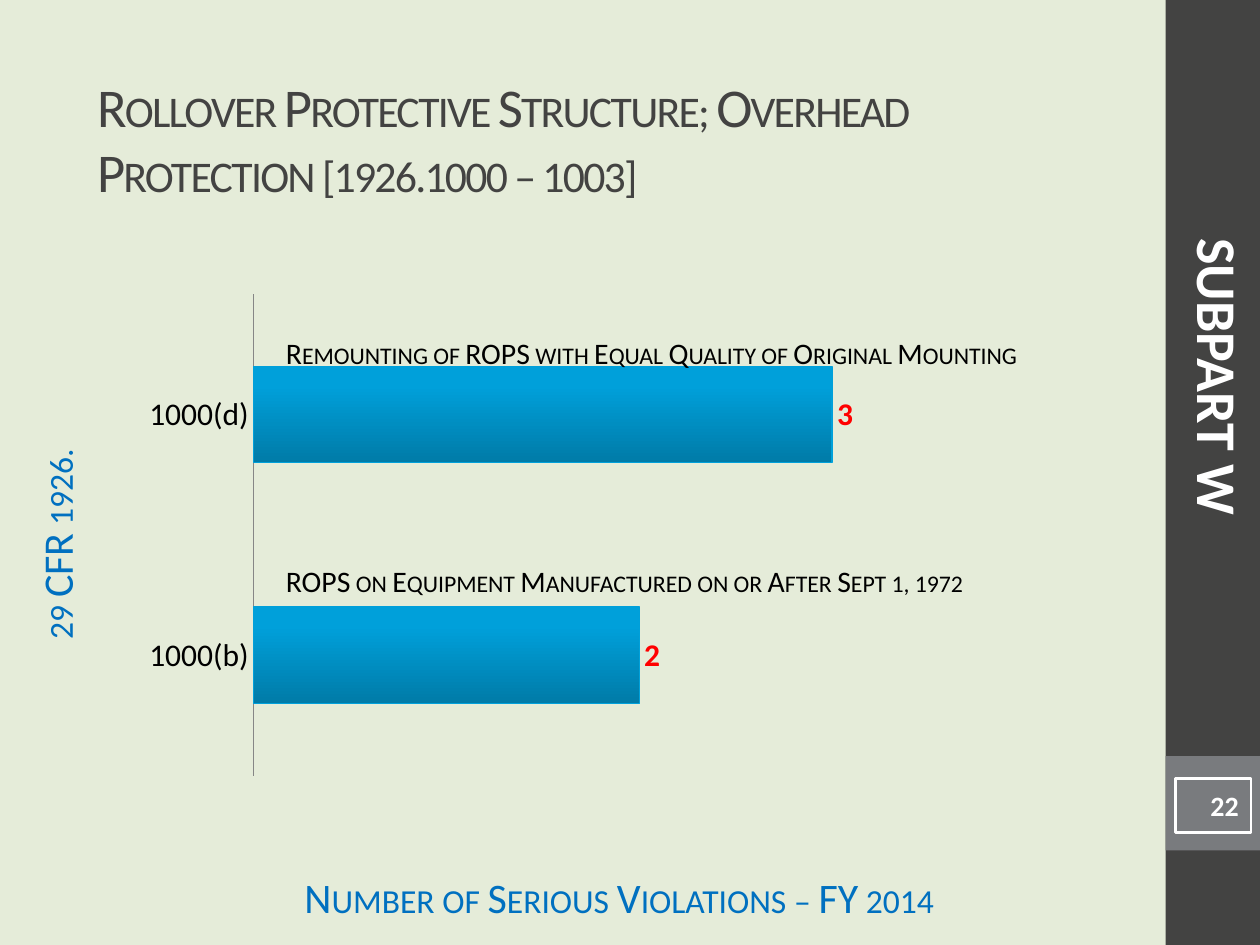
from dataclasses import dataclass

from lxml import etree
from pptx import Presentation
from pptx.chart.data import CategoryChartData
from pptx.dml.color import RGBColor
from pptx.enum.chart import XL_CHART_TYPE, XL_LABEL_POSITION, XL_TICK_MARK
from pptx.enum.shapes import MSO_SHAPE
from pptx.enum.text import MSO_ANCHOR, MSO_AUTO_SIZE, PP_ALIGN
from pptx.oxml.ns import qn
from pptx.util import Inches, Pt

BAR = XL_CHART_TYPE.BAR_CLUSTERED
OUTSIDE = XL_LABEL_POSITION.OUTSIDE_END
NO_TICK = XL_TICK_MARK.NONE
RECT = MSO_SHAPE.RECTANGLE
LEFT, CENTER, RIGHT = PP_ALIGN.LEFT, PP_ALIGN.CENTER, PP_ALIGN.RIGHT
TOP, MIDDLE = MSO_ANCHOR.TOP, MSO_ANCHOR.MIDDLE


@dataclass(frozen=True)
class Theme:
    font: str = "Calibri"
    background: str = "E5ECD9"
    dark: str = "434342"
    gray: str = "797B7E"
    axis: str = "868686"
    blue: str = "0070C0"
    bar_dark: str = "007BA8"
    bar_light: str = "00A0DA"
    value: str = "FF0000"
    black: str = "000000"
    white: str = "FFFFFF"
    title_size: float = 31.2
    subpart_size: float = 32
    axis_title_size: float = 24
    label_size: float = 18
    note_size: float = 17
    number_size: float = 16


THEME = Theme()
WIDTH, HEIGHT = 10, 7.5
SIDEBAR = 0.75  # width of the dark strip and height of the number block

TITLE = "Rollover Protective Structure; Overhead Protection [1926.1000 – 1003]"
SUBPART = "SUBPART W"
PAGE = "22"
VALUE_TITLE = "Number of Serious Violations – FY 2014"
CATEGORY_TITLE = "29 CFR 1926."
VIOLATIONS = {"1000(b)": 2, "1000(d)": 3}
NOTES = [
    ("Remounting of ROPS with Equal Quality of Original Mounting", 2.61, 6.15),
    ("ROPS on Equipment Manufactured on or After Sept 1, 1972", 4.42, 5.91),
]
PLOT_AREA = {"x": 0.156, "y": 0.021, "w": 0.824, "h": 0.956}  # shares of the chart


def rgb(code):
    return RGBColor.from_string(code)


def write(shape, text, size, color, align=LEFT, anchor=TOP, bold=False, small_caps=False):
    frame = shape.text_frame
    frame.text = text
    frame.word_wrap = True
    frame.auto_size = MSO_AUTO_SIZE.NONE
    frame.vertical_anchor = anchor
    paragraph = frame.paragraphs[0]
    paragraph.alignment = align
    run = paragraph.runs[0]
    font = run.font
    font.name, font.size, font.bold = THEME.font, Pt(size), bold
    font.color.rgb = rgb(color)
    if small_caps:
        run._r.get_or_add_rPr().set("cap", "small")
    return run


def add_text(slide, box, *args, rotation=0, **style):
    textbox = slide.shapes.add_textbox(*map(Inches, box))
    textbox.rotation = rotation
    write(textbox, *args, **style)
    return textbox.text_frame


def add_rectangle(slide, box, fill=None, line=None):
    shape = slide.shapes.add_shape(RECT, *map(Inches, box))
    shape.shadow.inherit = False
    if fill:
        shape.fill.solid()
        shape.fill.fore_color.rgb = rgb(fill)
    else:
        shape.fill.background()
    if line:
        shape.line.color.rgb = rgb(line)
        shape.line.width = Pt(1.5)
    else:
        shape.line.fill.background()
    return shape


def fix_plot_area(chart):
    """Pin the inner plot area to its shares of the chart."""
    plot_area = chart._chartSpace.chart.plotArea
    for old in plot_area.findall(qn("c:layout")):
        plot_area.remove(old)
    layout = etree.Element(qn("c:layout"))
    manual = etree.SubElement(layout, qn("c:manualLayout"))
    settings = {"layoutTarget": "inner", "xMode": "edge", "yMode": "edge", **PLOT_AREA}
    for tag, setting in settings.items():
        etree.SubElement(manual, qn(f"c:{tag}")).set("val", str(setting))
    plot_area.insert(0, layout)


def add_violations_chart(slide):
    data = CategoryChartData()
    data.categories = list(VIOLATIONS)
    data.add_series("Series 1", list(VIOLATIONS.values()))
    chart = slide.shapes.add_chart(BAR, *map(Inches, (1, 2.25, 6.5, 4)), data).chart
    chart.has_legend = chart.has_title = False
    chart.font.name, chart.font.size = THEME.font, Pt(THEME.label_size)
    chart.font.color.rgb = rgb(THEME.black)
    fix_plot_area(chart)

    values, categories = chart.value_axis, chart.category_axis
    values.visible = values.has_major_gridlines = False
    values.minimum_scale, values.maximum_scale = 0, 3.5
    categories.major_tick_mark = categories.minor_tick_mark = NO_TICK
    categories.format.line.color.rgb = rgb(THEME.axis)

    plot = chart.plots[0]
    plot.vary_by_categories = False
    plot.gap_width, plot.overlap = 150, -25
    bars = plot.series[0]
    fill = bars.format.fill
    fill.gradient()
    fill.gradient_angle = 90
    stops = ((0, THEME.bar_dark), (0.8, THEME.bar_light))
    for stop, (position, color) in zip(fill.gradient_stops, stops):
        stop.position = position
        stop.color.rgb = rgb(color)
    bars.format.line.color.rgb = rgb(THEME.bar_light)
    bars.format.line.width = Pt(0.75)

    labels = bars.data_labels
    labels.show_value = True
    labels.position = OUTSIDE
    labels.font.size, labels.font.bold = Pt(THEME.label_size), True
    labels.font.color.rgb = rgb(THEME.value)


def main():
    deck = Presentation()
    deck.slide_width, deck.slide_height = Inches(WIDTH), Inches(HEIGHT)
    slide = deck.slides.add_slide(deck.slide_layouts[5])
    slide.background.fill.solid()
    slide.background.fill.fore_color.rgb = rgb(THEME.background)

    sidebar_left = WIDTH - SIDEBAR
    add_rectangle(slide, (sidebar_left, 0, SIDEBAR, HEIGHT), THEME.dark)
    add_rectangle(slide, (sidebar_left, HEIGHT - 2 * SIDEBAR, SIDEBAR, SIDEBAR), THEME.gray)

    title = slide.shapes.title
    title.left, title.top, title.width, title.height = map(Inches, (0.67, 0.47, 8.33, 1.25))
    heading = write(title, TITLE, THEME.title_size, THEME.dark, anchor=MIDDLE, small_caps=True)
    heading._r.get_or_add_rPr().set("spc", "-100")

    axis_titles = [
        (VALUE_TITLE, (2.08, 6.92, 5.67, 0.33), 0),
        (CATEGORY_TITLE, (-1.56, 4.03, 4.19, 0.58), 270),
    ]
    for text, box, rotation in axis_titles:
        frame = add_text(slide, box, text, THEME.axis_title_size, THEME.blue,
                         align=CENTER, small_caps=True, rotation=rotation)
        frame.margin_top = 0

    add_violations_chart(slide)
    for note, top, width in NOTES:
        frame = add_text(slide, (2.17, top, width, 0.39), note, THEME.note_size,
                         THEME.black, small_caps=True)
        frame.word_wrap = False

    number = add_rectangle(slide, (9.33, 6.18, 0.6, 0.43), line=THEME.white)
    write(number, PAGE, THEME.number_size, THEME.white, RIGHT, MIDDLE, bold=True)
    add_text(slide, (6.69, 2.67, 5.98, 0.64), SUBPART, THEME.subpart_size, THEME.white,
             align=CENTER, bold=True, rotation=90)
    deck.save("out.pptx")


if __name__ == "__main__":
    main()
